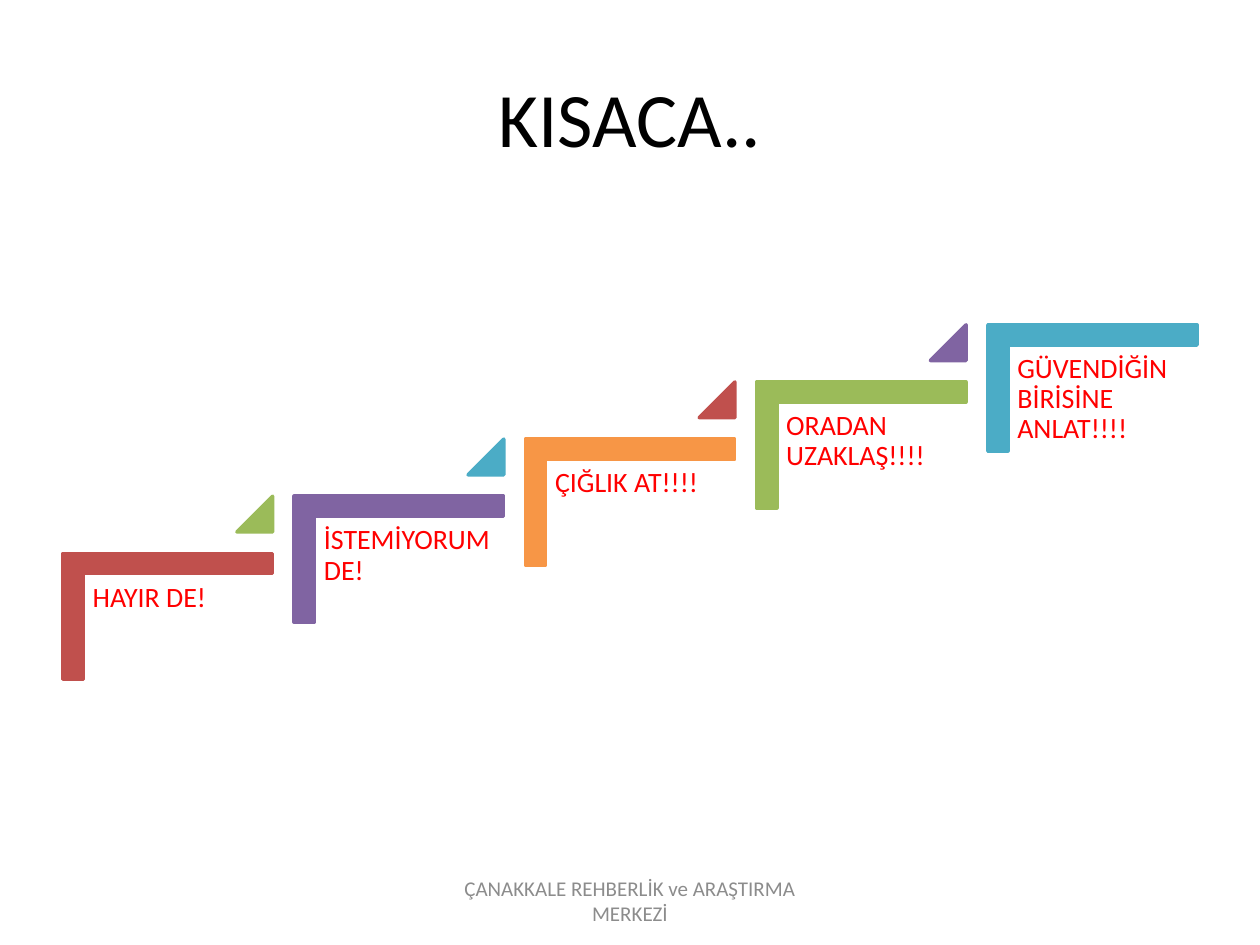
"""Build the "KISACA.." slide: five rising steps with a title and a footer."""
from dataclasses import dataclass

from pptx import Presentation
from pptx.dml.color import RGBColor
from pptx.enum.shapes import MSO_SHAPE
from pptx.enum.text import MSO_ANCHOR, PP_ALIGN
from pptx.util import Pt

CORNER = MSO_SHAPE.CORNER
TRIANGLE = MSO_SHAPE.ISOSCELES_TRIANGLE
MIDDLE = MSO_ANCHOR.MIDDLE
TOP = MSO_ANCHOR.TOP
CENTER = PP_ALIGN.CENTER
LEFT = PP_ALIGN.LEFT


@dataclass(frozen=True)
class Theme:
    font: str = "Calibri"
    title_size: int = 44
    step_size: int = 16
    footer_size: int = 12
    title: str = "000000"
    step: str = "FF0000"
    footer: str = "8C8C8C"
    red: str = "C0504D"
    green: str = "9BBB59"
    purple: str = "8064A2"
    teal: str = "4BACC6"
    orange: str = "F79646"


theme = Theme()


def write(box, text, size, color, align, anchor):
    frame = box.text_frame
    frame.word_wrap = True
    frame.vertical_anchor = anchor
    frame.text = text
    paragraph = frame.paragraphs[0]
    paragraph.alignment = align
    font = paragraph.runs[0].font
    font.name = theme.font
    font.size = Pt(size)
    font.color.rgb = RGBColor.from_string(color)
    return frame


def add_solid(shapes, kind, left, top, width, height, color, adjustments):
    solid = shapes.add_shape(kind, Pt(left), Pt(top), Pt(width), Pt(height))
    solid.shadow.inherit = False
    solid.fill.solid()
    solid.fill.fore_color.rgb = RGBColor.from_string(color)
    solid.line.color.rgb = RGBColor.from_string(color)
    solid.line.width = Pt(2)
    for index, value in enumerate(adjustments):
        solid.adjustments[index] = value
    return solid


presentation = Presentation()
presentation.slide_width = Pt(720)
presentation.slide_height = Pt(540)
slide = presentation.slides.add_slide(presentation.slide_layouts[5])

title = slide.shapes.title
title.left, title.top, title.width, title.height = Pt(36), Pt(21.6), Pt(648), Pt(90)
write(title, "KISACA..", theme.title_size, theme.title, CENTER, MIDDLE)

steps = [
    ("HAYIR DE!", theme.red, theme.green),
    ("İSTEMİYORUM DE!", theme.purple, theme.teal),
    ("ÇIĞLIK AT!!!!", theme.orange, theme.red),
    ("ORADAN UZAKLAŞ!!!!", theme.green, theme.purple),
    ("GÜVENDİĞİN BİRİSİNE ANLAT!!!!", theme.teal, None),
]
first_left, first_top = 59.8, 292.4
run, rise = 132.1, 32.65

staircase = slide.shapes.add_group_shape().shapes
for number, (wording, corner_color, arrow_color) in enumerate(steps):
    left = first_left + number * run
    top = first_top - number * rise

    corner = add_solid(staircase, CORNER, left, top, 72, 119.6, corner_color, [0.161, 0.161])
    corner.rotation = 90

    label = staircase.add_textbox(Pt(left - 11.8), Pt(top + 35.7), Pt(108), Pt(94.5))
    frame = write(label, wording, theme.step_size, theme.step, LEFT, TOP)
    frame.margin_left = frame.margin_right = Pt(5)
    frame.margin_top = frame.margin_bottom = Pt(5)
    frame.paragraphs[0].line_spacing = 0.9

    if arrow_color:
        add_solid(staircase, TRIANGLE, left + 75.6, top - 8.8, 20.4, 20.4, arrow_color, [1])

footer = slide.shapes.add_textbox(Pt(246), Pt(500.5), Pt(228), Pt(28.75))
write(footer, "ÇANAKKALE REHBERLİK ve ARAŞTIRMA MERKEZİ", theme.footer_size, theme.footer, CENTER, MIDDLE)

presentation.save("out.pptx")
